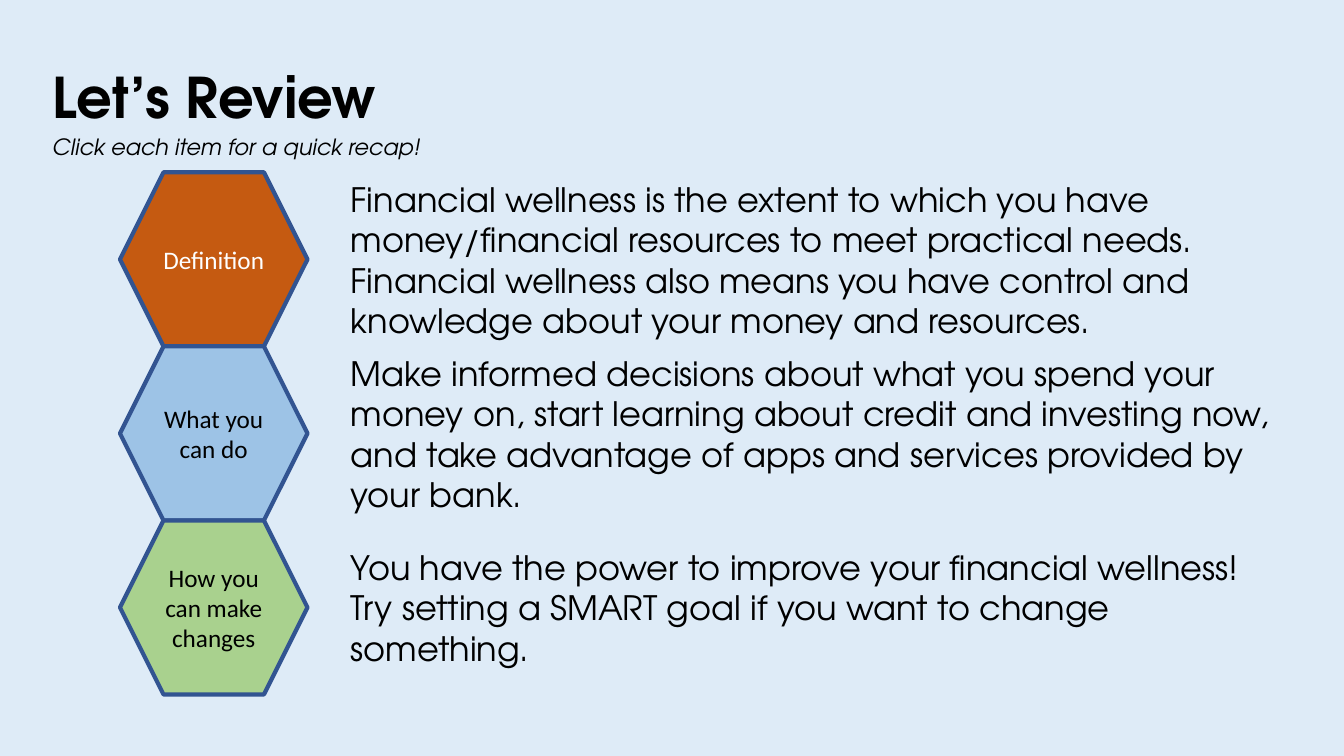
from pptx import Presentation
from pptx.dml.color import RGBColor
from pptx.enum.shapes import MSO_SHAPE
from pptx.enum.text import MSO_ANCHOR, PP_ALIGN
from pptx.util import Inches, Pt

HEXAGON = MSO_SHAPE.HEXAGON
MIDDLE = MSO_ANCHOR.MIDDLE
CENTER = PP_ALIGN.CENTER

HEADING_FONT = "TeX Gyre Adventor"
LABEL_FONT = "Calibri"
BLACK = "000000"
WHITE = "FFFFFF"
BACKGROUND = "DEEBF7"
OUTLINE = "325491"

# label, hexagon fill, label colour, height of the recap, recap
REVIEW_ITEMS = [
    ("Definition", "C55A11", WHITE, 1.72,
     "Financial wellness is the extent to which you have money/financial "
     "resources to meet practical needs. Financial wellness also means you "
     "have control and knowledge about your money and resources."),
    ("What you can do", "9DC3E6", BLACK, 1.72,
     "Make informed decisions about what you spend your money on, start "
     "learning about credit and investing now, and take advantage of apps "
     "and services provided by your bank."),
    ("How you can make changes", "A9D18E", BLACK, 1.31,
     "You have the power to improve your financial wellness! Try setting a "
     "SMART goal if you want to change something."),
]


def color(hex_string):
    return RGBColor.from_string(hex_string)


def set_text(shape, text, size, font_name, font_color=BLACK, bold=False, italic=False):
    text_frame = shape.text_frame
    text_frame.word_wrap = True
    text_frame.text = text
    font = text_frame.paragraphs[0].runs[0].font
    font.name = font_name
    font.size = Pt(size)
    font.bold = bold
    font.italic = italic
    font.color.rgb = color(font_color)


def add_text(slide, left, top, width, height, text, size, **style):
    text_box = slide.shapes.add_textbox(
        Inches(left), Inches(top), Inches(width), Inches(height))
    set_text(text_box, text, size, HEADING_FONT, **style)
    return text_box


def add_heading(slide, left, top):
    add_text(slide, left, top, 11.56, 0.77, "Let’s Review", 40, bold=True)
    add_text(slide, left, top + 0.7, 4.44, 0.37,
             "Click each item for a quick recap!", 16, italic=True)


def add_hexagon(slide, left, top, width, height, label, fill, label_color):
    hexagon = slide.shapes.add_shape(
        HEXAGON, Inches(left), Inches(top), Inches(width), Inches(height))
    hexagon.shadow.inherit = False
    hexagon.fill.solid()
    hexagon.fill.fore_color.rgb = color(fill)
    hexagon.line.color.rgb = color(OUTLINE)
    hexagon.line.width = Pt(3)
    set_text(hexagon, label, 18, LABEL_FONT, label_color)
    hexagon.text_frame.vertical_anchor = MIDDLE
    hexagon.text_frame.paragraphs[0].alignment = CENTER


def add_review_items(slide, left, top, width, height):
    """Stack the hexagons, each with its recap centred beside it."""
    row_height = height / len(REVIEW_ITEMS)
    recap_offset = 2.19
    for row, (label, fill, label_color, recap_height, recap) in enumerate(REVIEW_ITEMS):
        row_top = top + row * row_height
        add_hexagon(slide, left, row_top, 1.86, row_height, label, fill, label_color)
        recap_top = row_top + (row_height - recap_height) / 2
        text_box = add_text(slide, left + recap_offset, recap_top,
                            width - recap_offset, recap_height, recap, 24)
        text_box.text_frame.vertical_anchor = MIDDLE


def build_review_slide(presentation):
    slide = presentation.slides.add_slide(presentation.slide_layouts[6])
    slide.background.fill.solid()
    slide.background.fill.fore_color.rgb = color(BACKGROUND)
    add_heading(slide, 0.42, 0.57)
    add_review_items(slide, 1.19, 1.71, 11.66, 5.18)


def main():
    presentation = Presentation()
    presentation.slide_width = Inches(13.33)
    presentation.slide_height = Inches(7.5)
    build_review_slide(presentation)
    presentation.save("out.pptx")


if __name__ == "__main__":
    main()
